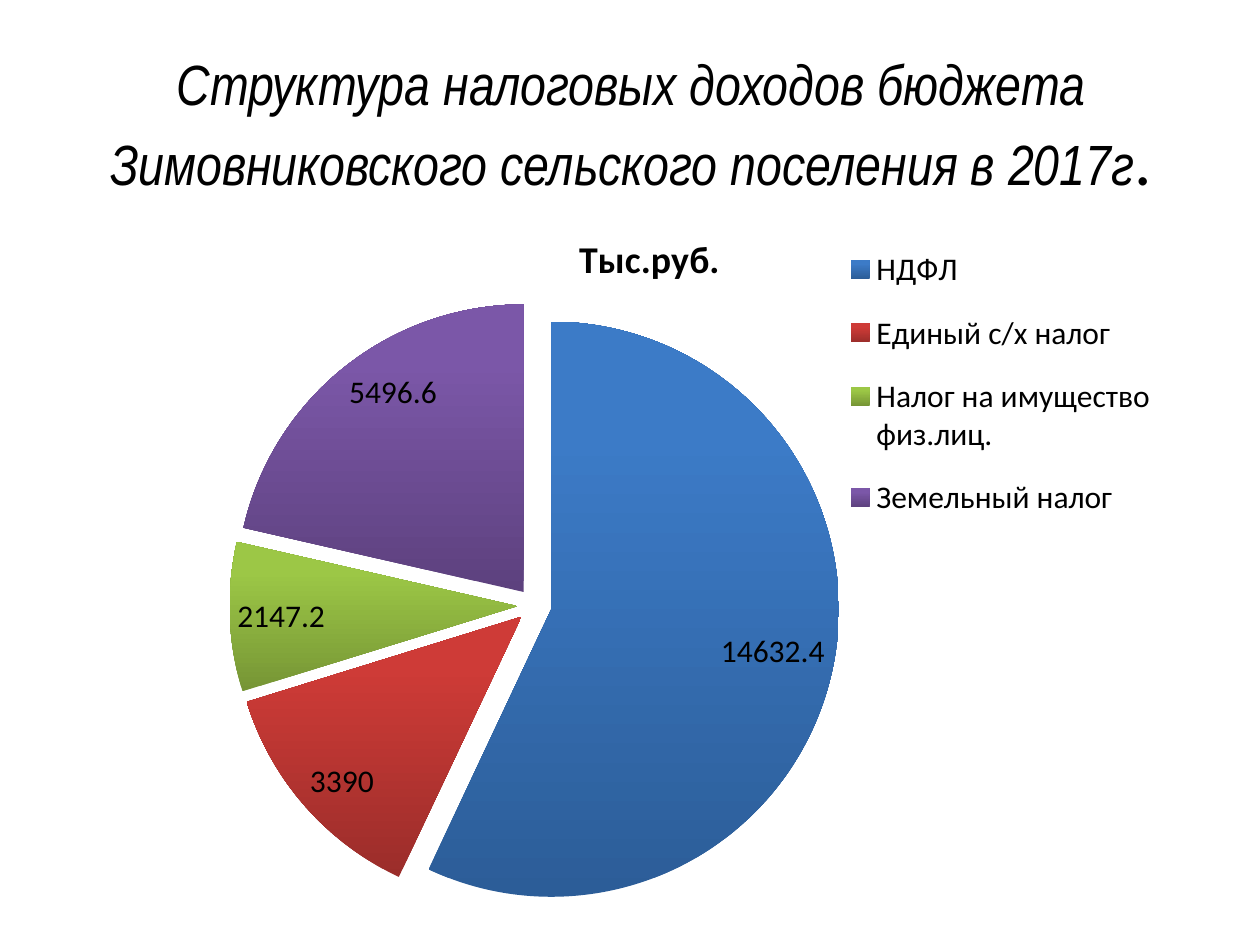
import pptx
import pptx.chart.data
import pptx.dml.color
import pptx.enum.chart
import pptx.enum.text
import pptx.oxml
import pptx.util
from pptx.util import Inches

TAXES = [
    # name, thousand roubles, light colour, dark colour
    ("НДФЛ", 14632.4, "3C7BC7", "2C5D98"),
    ("Единый с/х налог", 3390, "CE3B37", "9B2D2A"),
    ("Налог на имущество физ.лиц.", 2147.2, "9CC746", "769535"),
    ("Земельный налог", 5496.6, "7B57A8", "5D417E"),
]


def colour(value):
    return pptx.dml.color.RGBColor.from_string(value)


def style_font(font, name, size, bold=False, italic=False):
    font.name = name
    font.size = pptx.util.Pt(size)
    font.bold = bold
    font.italic = italic
    font.color.rgb = colour("000000")


def place_title(page, left, top, width, height):
    title = page.shapes.title
    title.left, title.top, title.width, title.height = left, top, width, height
    frame = title.text_frame
    frame.word_wrap = True
    frame.auto_size = pptx.enum.text.MSO_AUTO_SIZE.NONE
    frame.vertical_anchor = pptx.enum.text.MSO_ANCHOR.MIDDLE
    para = frame.paragraphs[0]
    para.alignment = pptx.enum.text.PP_ALIGN.CENTER
    heading = para.add_run()
    heading.text = ("Структура налоговых доходов бюджета "
                    "Зимовниковского сельского поселения в 2017г")
    style_font(heading.font, "Arial Narrow", 32.4, italic=True)
    stop = para.add_run()
    stop.text = "."
    style_font(stop.font, "Calibri", 39.6)


def set_layout(element, x, y, width, height, inner=False):
    """Fix a chart part at fractions of the chart box."""
    for old in element.findall(pptx.oxml.ns.qn("c:layout")):
        element.remove(old)
    target = '<c:layoutTarget val="inner"/>' if inner else ""
    layout = pptx.oxml.parse_xml(
        f'<c:layout {pptx.oxml.ns.nsdecls("c")}><c:manualLayout>{target}'
        '<c:xMode val="edge"/><c:yMode val="edge"/>'
        f'<c:x val="{x}"/><c:y val="{y}"/><c:w val="{width}"/><c:h val="{height}"/>'
        '</c:manualLayout></c:layout>')
    if inner:
        element.insert(0, layout)
    else:
        element.find(pptx.oxml.ns.qn("c:legendPos")).addnext(layout)


def paint_slices(series):
    for index, (_, _, light, dark) in enumerate(TAXES):
        fill = series.points[index].format.fill
        fill.gradient()
        fill.gradient_angle = 90
        bottom, top = fill.gradient_stops
        bottom.color.rgb, bottom.position = colour(dark), 0
        top.color.rgb, top.position = colour(light), 0.8


def explode_slices(series, percent):
    for point in series._element.findall(pptx.oxml.ns.qn("c:dPt")):
        explosion = pptx.oxml.parse_xml(
            f'<c:explosion {pptx.oxml.ns.nsdecls("c")} val="{percent}"/>')
        point.find(pptx.oxml.ns.qn("c:spPr")).addprevious(explosion)


def place_pie(page, left, top, width, height):
    data = pptx.chart.data.CategoryChartData()
    data.categories = [tax[0] for tax in TAXES]
    data.add_series("Тыс.руб.", [tax[1] for tax in TAXES])
    chart = page.shapes.add_chart(
        pptx.enum.chart.XL_CHART_TYPE.PIE, left, top, width, height, data).chart
    style_font(chart.font, "Calibri", 18)

    chart.has_title = True
    chart.chart_title.text_frame.text = "Тыс.руб."
    title_run = chart.chart_title.text_frame.paragraphs[0].runs[0]
    style_font(title_run.font, "Calibri", 21.6, bold=True)

    chart.has_legend = True
    chart.legend.position = pptx.enum.chart.XL_LEGEND_POSITION.RIGHT
    chart.legend.include_in_layout = False
    style_font(chart.legend.font, "Calibri", 18)
    set_layout(chart.legend._element, 0.66, 0.03, 0.29, 0.45)

    plot = chart.plots[0]
    plot.vary_by_categories = True
    plot.has_data_labels = True
    labels = plot.data_labels
    labels.show_value = True
    labels.show_percentage = False
    labels.number_format, labels.number_format_is_linked = "General", False
    labels.position = pptx.enum.chart.XL_LABEL_POSITION.INSIDE_END
    style_font(labels.font, "Calibri", 18)
    paint_slices(plot.series[0])
    explode_slices(plot.series[0], 6)
    set_layout(chart._chartSpace.chart.plotArea, 0.15, 0.16, 0.5, 0.82, inner=True)


def main():
    deck = pptx.Presentation()
    deck.slide_width, deck.slide_height = Inches(10), Inches(7.5)
    page = deck.slides.add_slide(deck.slide_layouts[5])
    place_title(page, Inches(0.51), Inches(0.36), Inches(9), Inches(1.25))
    place_pie(page, Inches(0.59), Inches(1.62), Inches(9.13), Inches(5.59))
    deck.save("out.pptx")


if __name__ == "__main__":
    main()
